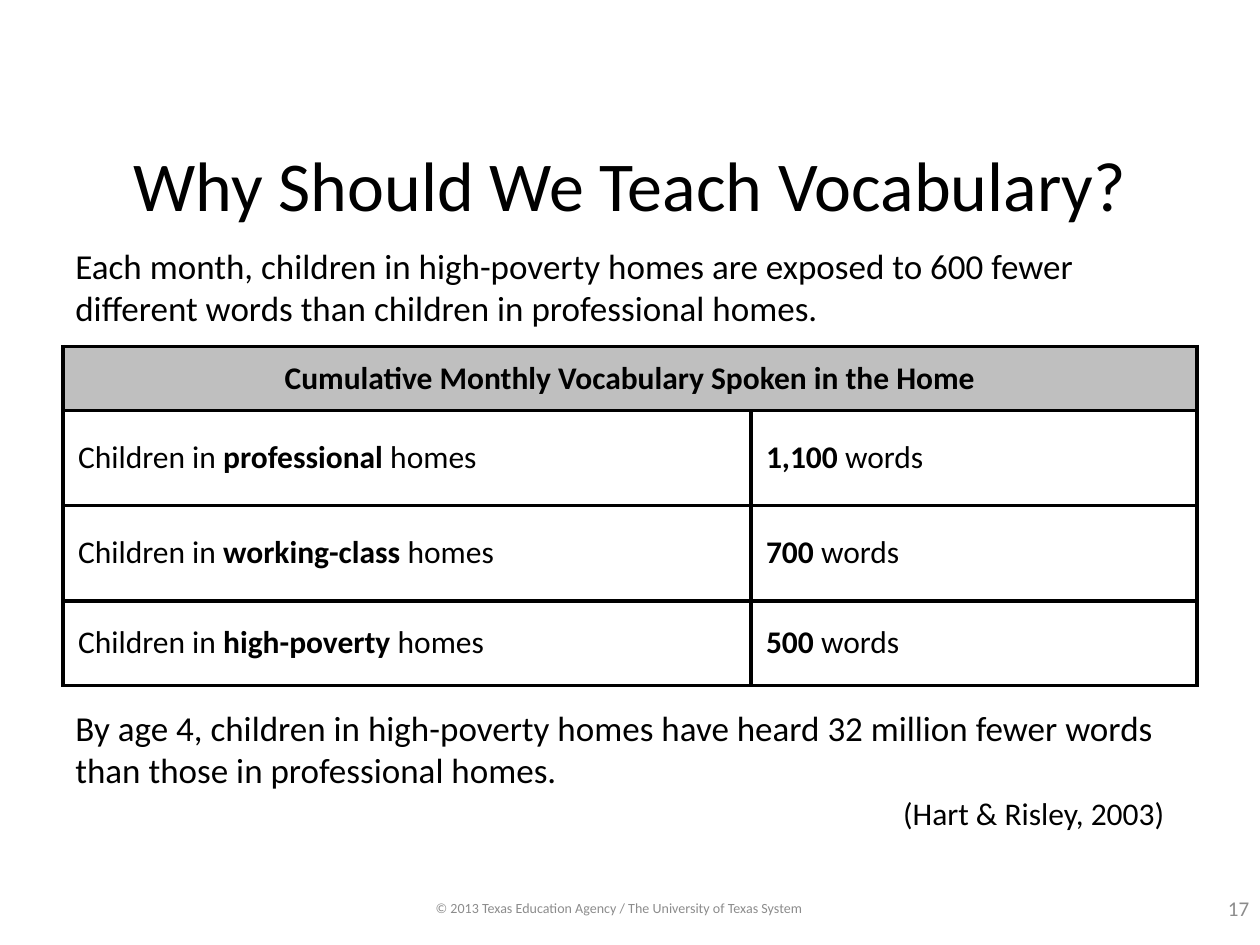
import pptx
import pptx.dml.color
import pptx.enum.text
import pptx.oxml
import pptx.oxml.ns
import pptx.util

Inches = pptx.util.Inches
Pt = pptx.util.Pt
ALIGN = pptx.enum.text.PP_ALIGN
ANCHOR = pptx.enum.text.MSO_ANCHOR
COLORS = {"text": "000000", "footer": "8C8C8C", "header": "BFBFBF", "border": "000000"}
BORDER_WIDTH = Pt(2.25)


def write(frame, text, size=18, color="text", align=ALIGN.LEFT):
    """Fill the frame with one paragraph; parts between asterisks are bold."""
    paragraph = frame.paragraphs[0]
    paragraph.alignment = align
    for index, part in enumerate(text.split("*")):
        if part:
            run = paragraph.add_run()
            run.text = part
            run.font.name = "Calibri"
            run.font.size = Pt(size)
            run.font.bold = index % 2 == 1
            run.font.color.rgb = pptx.dml.color.RGBColor.from_string(COLORS[color])


def add_borders(cell):
    properties = cell._tc.get_or_add_tcPr()
    for side in ("lnL", "lnR", "lnT", "lnB"):
        properties.append(pptx.oxml.parse_xml(
            f'<a:{side} {pptx.oxml.ns.nsdecls("a")} w="{BORDER_WIDTH}">'
            f'<a:solidFill><a:srgbClr val="{COLORS["border"]}"/></a:solidFill></a:{side}>'))


deck = pptx.Presentation()
deck.slide_width, deck.slide_height = Inches(10), Inches(7.5)
slide = deck.slides.add_slide(deck.slide_layouts[6])

# Vocabulary table
column_widths = (5.46, 3.54)
row_heights = (0.51, 0.75, 0.76, 0.67)
rows = [
    ("*Cumulative Monthly Vocabulary Spoken in the Home*", ""),
    ("Children in *professional* homes", "*1,100* words"),
    ("Children in *working-class* homes", "*700* words"),
    ("Children in *high-poverty* homes", "*500* words"),
]
vocabulary = slide.shapes.add_table(
    len(rows), len(column_widths), Inches(0.5), Inches(2.75),
    Inches(sum(column_widths)), Inches(sum(row_heights))).table
for column, width in zip(vocabulary.columns, column_widths):
    column.width = Inches(width)
for row, height in zip(vocabulary.rows, row_heights):
    row.height = Inches(height)
vocabulary.cell(0, 0).merge(vocabulary.cell(0, 1))

for row_index, row in enumerate(rows):
    is_header = row_index == 0
    for column_index, text in enumerate(row):
        cell = vocabulary.cell(row_index, column_index)
        cell.vertical_anchor = ANCHOR.MIDDLE
        cell.margin_left = cell.margin_right = Inches(0.12)
        cell.margin_top = cell.margin_bottom = Inches(0.05)
        add_borders(cell)
        if is_header:
            cell.fill.solid()
            cell.fill.fore_color.rgb = pptx.dml.color.RGBColor.from_string(COLORS["header"])
        else:
            cell.fill.background()
        write(cell.text_frame, text, align=ALIGN.CENTER if is_header else ALIGN.LEFT)

# Title, statements, citation and footer: text, place, anchor, wrap, format
texts = [
    ("Why Should We Teach Vocabulary?", (0.5, 1.04, 9, 0.84), ANCHOR.MIDDLE, True,
     {"size": 40, "align": ALIGN.CENTER}),
    ("Each month, children in high-poverty homes are exposed to 600 fewer "
     "different words than children in professional homes.",
     (0.5, 1.89, 9, 0.77), ANCHOR.TOP, True, {"size": 20}),
    ("By age 4, children in high-poverty homes have heard 32 million fewer words "
     "than those in professional homes.",
     (0.5, 5.56, 9, 0.77), ANCHOR.TOP, True, {"size": 20}),
    ("(Hart & Risley, 2003)", (7.02, 6.25, 2.32, 0.4), ANCHOR.TOP, False,
     {"align": ALIGN.RIGHT}),
    ("© 2013 Texas Education Agency / The University of Texas System",
     (2.08, 7.08, 5.67, 0.25), ANCHOR.MIDDLE, True,
     {"size": 8, "color": "footer", "align": ALIGN.CENTER}),
    ("17", (9.58, 7.07, 0.5, 0.27), ANCHOR.MIDDLE, True,
     {"size": 12, "color": "footer", "align": ALIGN.CENTER}),
]
for text, place, anchor, wrap, text_format in texts:
    frame = slide.shapes.add_textbox(*map(Inches, place)).text_frame
    frame.word_wrap = wrap
    frame.vertical_anchor = anchor
    write(frame, text, **text_format)

deck.save("out.pptx")
